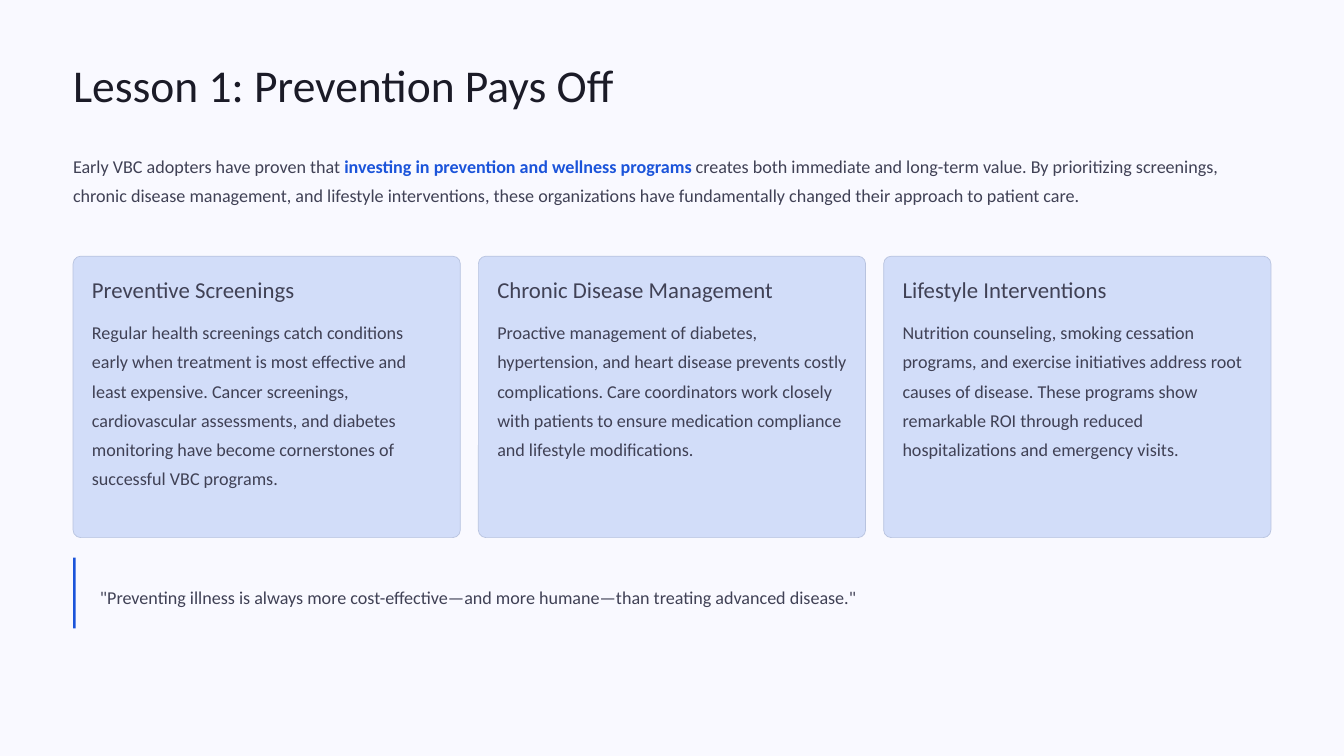
from pptx import Presentation
from pptx import util as u
from pptx.dml.color import RGBColor
from pptx.enum import shapes, text

PAPER = RGBColor(0xF9, 0xF9, 0xFF)
INK = RGBColor(0x1B, 0x1B, 0x27)
BODY = RGBColor(0x40, 0x41, 0x55)
ACCENT = RGBColor(0x1B, 0x54, 0xDA)
CARD = RGBColor(0xD2, 0xDD, 0xF9)
CARD_LINE = RGBColor(0xB8, 0xC3, 0xDF)

# Text formats: font size and line spacing in points
TITLE = {"size": 39, "spacing": 48.5, "color": INK}
HEADING = {"size": 19.5, "spacing": 24, "color": BODY}
PLAIN = {"size": 15.5, "spacing": 25, "color": BODY}

LEFT, WIDTH = 0.87, 14.26
CARD_TOP, CARD_W, CARD_H, CARD_STEP = 3.05, 4.61, 3.35, 4.825
PAD = 0.225

CARDS = [
    ("Preventive Screenings",
     "Regular health screenings catch conditions early when treatment is most "
     "effective and least expensive. Cancer screenings, cardiovascular assessments, "
     "and diabetes monitoring have become cornerstones of successful VBC programs."),
    ("Chronic Disease Management",
     "Proactive management of diabetes, hypertension, and heart disease prevents "
     "costly complications. Care coordinators work closely with patients to ensure "
     "medication compliance and lifestyle modifications."),
    ("Lifestyle Interventions",
     "Nutrition counseling, smoking cessation programs, and exercise initiatives "
     "address root causes of disease. These programs show remarkable ROI through "
     "reduced hospitalizations and emergency visits."),
]


class Deck:
    """Holds the style and the current slide."""
    font = "Calibri"

    def __init__(self, prs):
        self.s = prs.slides.add_slide(prs.slide_layouts[6])
        fill = self.s.background.fill
        fill.solid()
        fill.fore_color.rgb = PAPER

    def text(self, x, y, w, h, runs, style, wrap=True):
        """Add a text box; runs are (text, overrides) pairs."""
        sp = self.s.shapes.add_textbox(*map(u.Inches, (x, y, w, h)))
        tf = sp.text_frame
        frame = {"word_wrap": wrap, "vertical_anchor": text.MSO_ANCHOR.TOP,
                 "margin_left": 0, "margin_right": 0,
                 "margin_top": 0, "margin_bottom": 0}
        for name, value in frame.items():
            setattr(tf, name, value)
        p = tf.paragraphs[0]
        p.line_spacing = u.Pt(style["spacing"])
        for words, overrides in runs:
            r = p.add_run()
            r.text = words
            look = {**style, **overrides}
            font = {"name": self.font, "size": u.Pt(look["size"]),
                    "bold": look.get("bold", False)}
            for name, value in font.items():
                setattr(r.font, name, value)
            r.font.color.rgb = look["color"]

    def box(self, x, y, w, h, color, line=None, radius=None):
        """Add a filled rectangle, rounded when a radius is given."""
        kind = shapes.MSO_SHAPE.ROUNDED_RECTANGLE if radius else shapes.MSO_SHAPE.RECTANGLE
        sp = self.s.shapes.add_shape(kind, *map(u.Inches, (x, y, w, h)))
        sp.shadow.inherit = False
        sp.fill.solid()
        sp.fill.fore_color.rgb = color
        if radius:
            sp.adjustments[0] = radius / min(w, h)
        if line:
            sp.line.color.rgb = line
            sp.line.width = u.Pt(0.6)
        else:
            sp.line.fill.background()

    def card(self, x, heading, body):
        self.box(x, CARD_TOP, CARD_W, CARD_H, CARD, CARD_LINE, radius=0.09)
        inner = CARD_W - 2 * PAD
        self.text(x + PAD, 3.28, inner, 0.34, [(heading, {})], HEADING, wrap=False)
        self.text(x + PAD, 3.74, inner, 2.43, [(body, {})], PLAIN)


def main():
    prs = Presentation()
    prs.slide_width, prs.slide_height = u.Inches(16), u.Inches(9)
    deck = Deck(prs)

    # Title and introduction
    deck.text(LEFT, 0.65, 7.68, 0.68, [("Lesson 1: Prevention Pays Off", {})],
              TITLE, wrap=False)
    deck.text(LEFT, 1.76, WIDTH, 1.04, [
        ("Early VBC adopters have proven that ", {}),
        ("investing in prevention and wellness programs", {"color": ACCENT, "bold": True}),
        (" creates both immediate and long-term value. By prioritizing screenings, "
         "chronic disease management, and lifestyle interventions, these organizations "
         "have fundamentally changed their approach to patient care.", {}),
    ], PLAIN)

    # Three cards
    for i, (heading, body) in enumerate(CARDS):
        deck.card(LEFT + i * CARD_STEP, heading, body)

    # Quotation with its accent bar
    deck.text(1.19, 6.89, 13.94, 0.35, [
        ('"Preventing illness is always more cost-effective—and more humane—than '
         'treating advanced disease."', {})], PLAIN, wrap=False)
    deck.box(LEFT, 6.64, 0.03, 0.84, ACCENT)

    prs.save("out.pptx")


if __name__ == "__main__":
    main()
